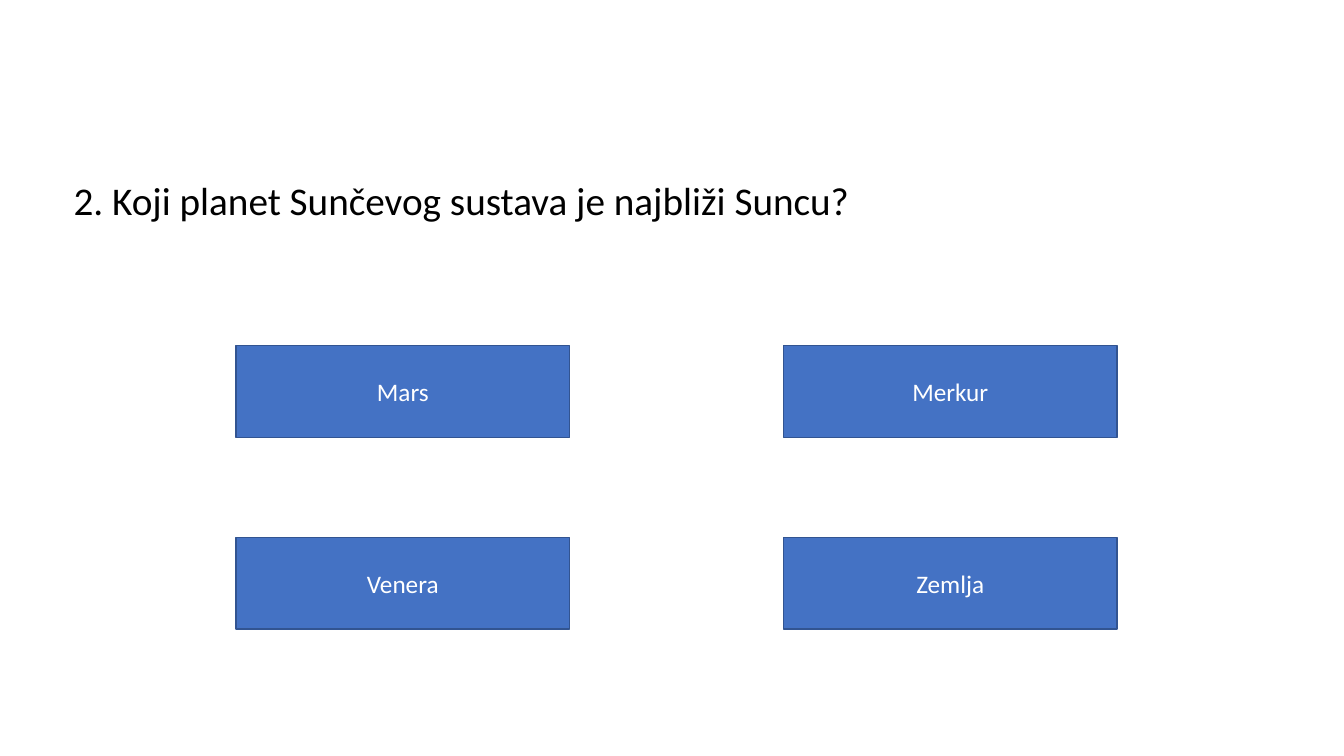
from dataclasses import dataclass

from pptx import Presentation
from pptx.dml.color import RGBColor
from pptx.enum import shapes, text
from pptx.util import Inches, Pt


@dataclass(frozen=True)
class Theme:
    """Colours, font and type sizes of the quiz."""
    font: str = "Calibri"
    question_size: int = 28
    answer_size: int = 18
    ink: str = "000000"
    answer_ink: str = "FFFFFF"
    answer_fill: str = "4472C4"
    answer_border: str = "325491"


THEME = Theme()
SLIDE_SIZE = (13.33, 7.5)
QUESTION_BOX = (0.63, 1.7, 11.81, 0.57)
ANSWERS_BOX = (2.34, 3.43, 8.74, 2.81)
ANSWER_SIZE = (3.31, 0.91)
QUESTION = "2. Koji planet Sunčevog sustava je najbliži Suncu?"
ANSWERS = (("Mars", "Merkur"), ("Venera", "Zemlja"))


def write(frame, wording, size, colour, align, anchor):
    """Fill a text frame with one formatted paragraph."""
    frame.text = wording
    frame.word_wrap = True
    frame.vertical_anchor = anchor
    paragraph = frame.paragraphs[0]
    paragraph.alignment = align
    paragraph.line_spacing = 1.0
    font = paragraph.runs[0].font
    font.name, font.size = THEME.font, Pt(size)
    font.color.rgb = RGBColor.from_string(colour)


def place_question(slide, box, question):
    """Put the question into the title placeholder within the box."""
    title = slide.shapes.title
    title.left, title.top, title.width, title.height = map(Inches, box)
    write(title.text_frame, question, THEME.question_size, THEME.ink,
          text.PP_ALIGN.LEFT, text.MSO_ANCHOR.TOP)
    title.text_frame.auto_size = text.MSO_AUTO_SIZE.SHAPE_TO_FIT_TEXT


def add_answer(slide, box, answer):
    """Add one answer button filling the box."""
    button = slide.shapes.add_shape(shapes.MSO_SHAPE.RECTANGLE, *map(Inches, box))
    button.shadow.inherit = False
    button.fill.solid()
    button.fill.fore_color.rgb = RGBColor.from_string(THEME.answer_fill)
    button.line.color.rgb = RGBColor.from_string(THEME.answer_border)
    button.line.width = Pt(1)
    write(button.text_frame, answer, THEME.answer_size, THEME.answer_ink,
          text.PP_ALIGN.CENTER, text.MSO_ANCHOR.MIDDLE)


def add_answers(slide, box, answers):
    """Spread the rows of answers evenly over the box."""
    left, top, width, height = box
    answer_width, answer_height = ANSWER_SIZE
    column_step = (width - answer_width) / (len(answers[0]) - 1)
    row_step = (height - answer_height) / (len(answers) - 1)
    for row, row_answers in enumerate(answers):
        for column, answer in enumerate(row_answers):
            place = (left + column * column_step, top + row * row_step)
            add_answer(slide, place + ANSWER_SIZE, answer)


def main():
    """Build and save the quiz slide."""
    quiz = Presentation()
    quiz.slide_width, quiz.slide_height = map(Inches, SLIDE_SIZE)
    slide = quiz.slides.add_slide(quiz.slide_layouts[5])
    add_answers(slide, ANSWERS_BOX, ANSWERS)
    place_question(slide, QUESTION_BOX, QUESTION)
    quiz.save("out.pptx")


if __name__ == "__main__":
    main()
